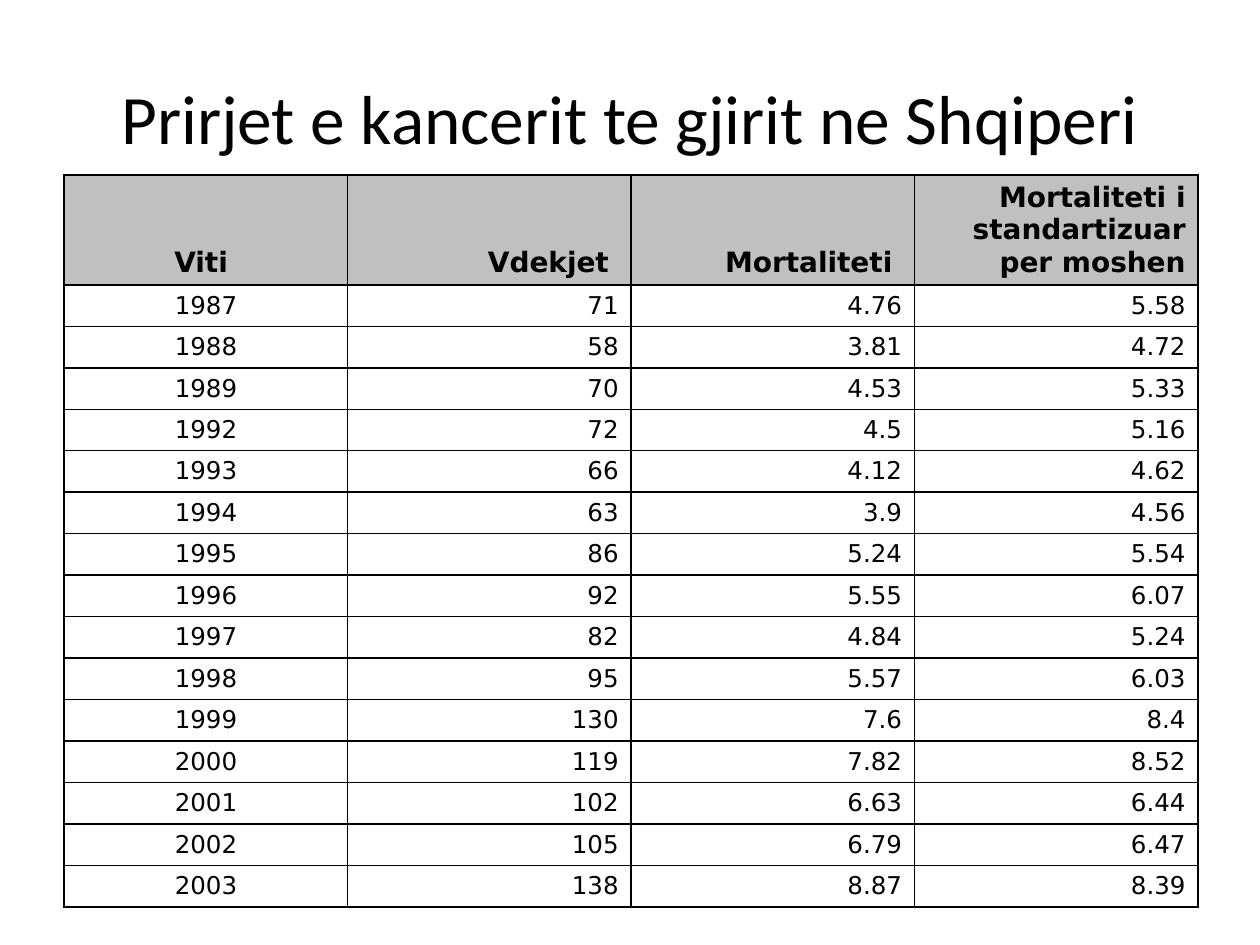
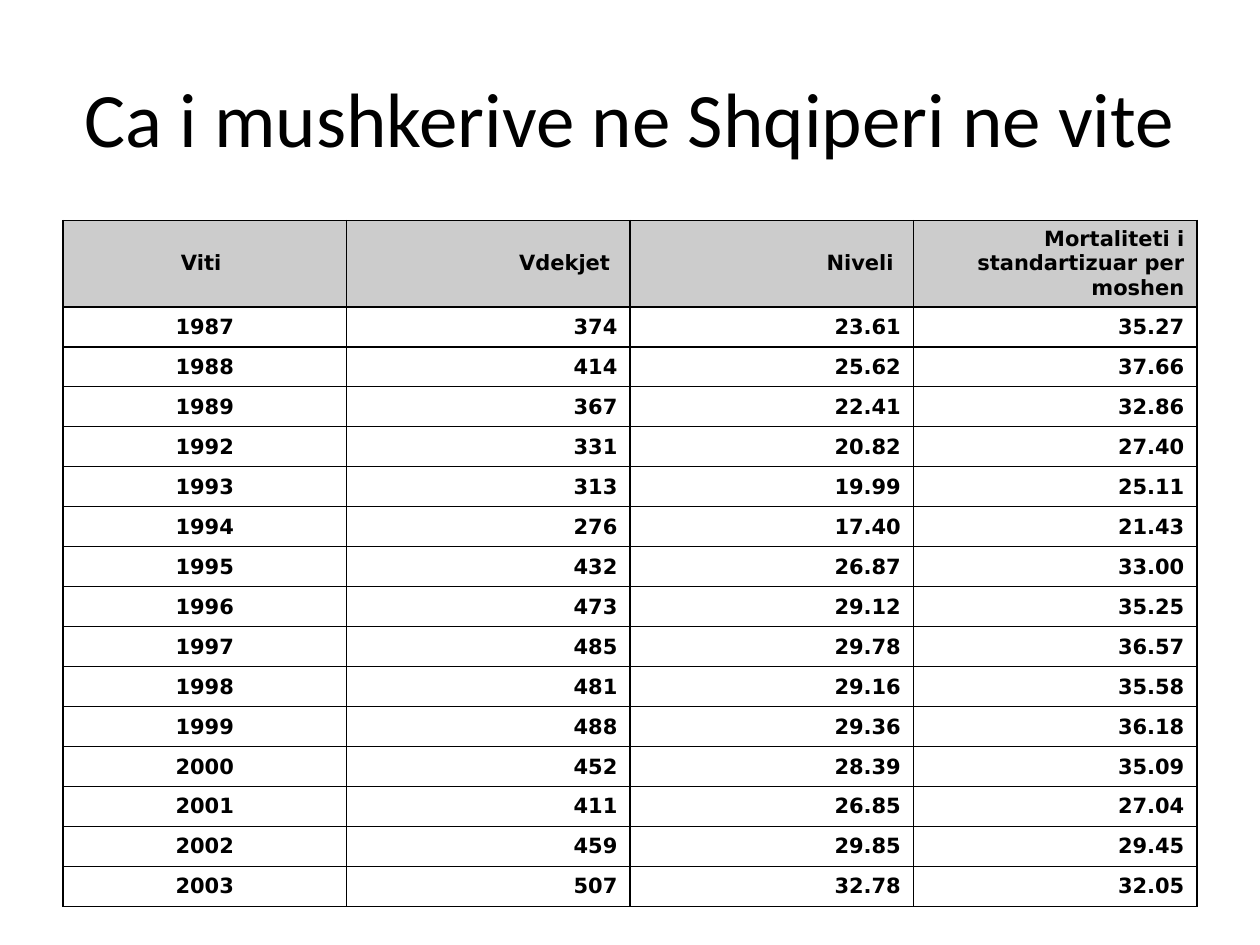
import lxml.etree
import pptx
import pptx.dml.color
import pptx.enum.text
import pptx.oxml.ns
import pptx.util

ALIGN = pptx.enum.text.PP_ALIGN
ANCHOR = pptx.enum.text.MSO_ANCHOR
COLORS = {"ink": "000000", "breast_header": "C0C0C0", "lung_header": "CCCCCC"}
FONTS = {"title": "Calibri", "table": "DejaVu Sans"}
GRID_COLUMNS, GRID_ROWS = 40, 30
TITLE_AREA = (2, 1.2, 36, 5)
TABLE_WIDTH = 36

YEARS = [1987, 1988, 1989, *range(1992, 2004)]
STANDARDIZED = "Mortaliteti i standartizuar per moshen"
BREAST_HEADERS = ["Viti ", "Vdekjet ", "Mortaliteti ", STANDARDIZED]
BREAST_SERIES = [
    "71 58 70 72 66 63 86 92 82 95 130 119 102 105 138",
    "4.76 3.81 4.53 4.5 4.12 3.9 5.24 5.55 4.84 5.57 7.6 7.82 6.63 6.79 8.87",
    "5.58 4.72 5.33 5.16 4.62 4.56 5.54 6.07 5.24 6.03 8.4 8.52 6.44 6.47 8.39",
]
LUNG_HEADERS = ["Viti ", "Vdekjet ", "Niveli ", STANDARDIZED]
LUNG_SERIES = [
    "374 414 367 331 313 276 432 473 485 481 488 452 411 459 507",
    "23.61 25.62 22.41 20.82 19.99 17.40 26.87 29.12 29.78 29.16 29.36 28.39 26.85 29.85 32.78",
    "35.27 37.66 32.86 27.40 25.11 21.43 33.00 35.25 36.57 35.58 36.18 35.09 27.04 29.45 32.05",
]


def yearly_rows(headers, series):
    return [headers, *zip(map(str, YEARS), *(values.split() for values in series))]


class Deck:
    def __init__(self):
        self.presentation = pptx.Presentation()
        self.presentation.slide_width = pptx.util.Inches(10)
        self.presentation.slide_height = pptx.util.Inches(7.5)
        self.slide = None

    def columns(self, count):
        return round(self.presentation.slide_width * count / GRID_COLUMNS)

    def rows(self, count):
        return round(self.presentation.slide_height * count / GRID_ROWS)

    def add_slide(self):
        layout = self.presentation.slide_layouts.get_by_name("Title Only")
        self.slide = self.presentation.slides.add_slide(layout)

    def add_text(self, paragraph, text, font, size, bold=False):
        run = paragraph.add_run()
        run.text = text
        run.font.name = font
        run.font.size = pptx.util.Pt(size)
        run.font.bold = bold
        run.font.color.rgb = pptx.dml.color.RGBColor.from_string(COLORS["ink"])

    def title(self, text, size):
        shape = self.slide.shapes.title
        left, top, width, height = TITLE_AREA
        shape.left, shape.top = self.columns(left), self.rows(top)
        shape.width, shape.height = self.columns(width), self.rows(height)
        frame = shape.text_frame
        frame.auto_size = pptx.enum.text.MSO_AUTO_SIZE.NONE
        frame.word_wrap = True
        frame.vertical_anchor = ANCHOR.MIDDLE
        paragraph = frame.paragraphs[0]
        paragraph.alignment = ALIGN.CENTER
        self.add_text(paragraph, text, FONTS["title"], size)

    def border(self, cell, points):
        properties = cell._tc.get_or_add_tcPr()
        name = pptx.oxml.ns.qn
        for side in ("a:lnL", "a:lnR", "a:lnT", "a:lnB"):
            line = lxml.etree.SubElement(properties, name(side), w=str(pptx.util.Pt(points)))
            fill = lxml.etree.SubElement(line, name("a:solidFill"))
            lxml.etree.SubElement(fill, name("a:srgbClr"), val=COLORS["ink"])

    def table(self, content, left, top, height, header_height, header_color,
              header_size, body_size, body_bold, anchor, border, hanging=0):
        shape = self.slide.shapes.add_table(
            len(content), len(content[0]), self.columns(left), self.rows(top),
            self.columns(TABLE_WIDTH), self.rows(height))
        table = shape.table
        table.first_row = table.horz_banding = False
        body_height = (height - header_height) / (len(content) - 1)
        for row_index, values in enumerate(content):
            is_header = row_index == 0
            table.rows[row_index].height = self.rows(header_height if is_header else body_height)
            for column_index, text in enumerate(values):
                cell = table.cell(row_index, column_index)
                self.border(cell, border)
                cell.vertical_anchor = anchor
                if is_header:
                    cell.fill.solid()
                    cell.fill.fore_color.rgb = pptx.dml.color.RGBColor.from_string(
                        COLORS[header_color])
                else:
                    cell.fill.background()
                paragraph = cell.text_frame.paragraphs[0]
                paragraph.alignment = ALIGN.RIGHT if column_index else ALIGN.CENTER
                if hanging:
                    indent = self.columns(hanging)
                    properties = paragraph._p.get_or_add_pPr()
                    properties.set("marL", str(indent))
                    properties.set("indent", str(-indent))
                self.add_text(paragraph, text, FONTS["table"],
                              header_size if is_header else body_size, is_header or body_bold)


def main():
    deck = Deck()

    deck.add_slide()
    deck.title("Prirjet e kancerit te gjirit ne Shqiperi", 39.6)
    deck.table(yearly_rows(BREAST_HEADERS, BREAST_SERIES), left=2.04, top=5.56,
               height=23.24, header_height=3.48, header_color="breast_header",
               header_size=16, body_size=14, body_bold=False,
               anchor=ANCHOR.BOTTOM, border=1)

    deck.add_slide()
    deck.title("Ca i mushkerive ne Shqiperi ne vite", 44)
    deck.table(yearly_rows(LUNG_HEADERS, LUNG_SERIES), left=2, top=7,
               height=21.8, header_height=2.74, header_color="lung_header",
               header_size=12, body_size=12, body_bold=True,
               anchor=ANCHOR.MIDDLE, border=0.75, hanging=1.5)

    deck.presentation.save("out.pptx")


if __name__ == "__main__":
    main()
